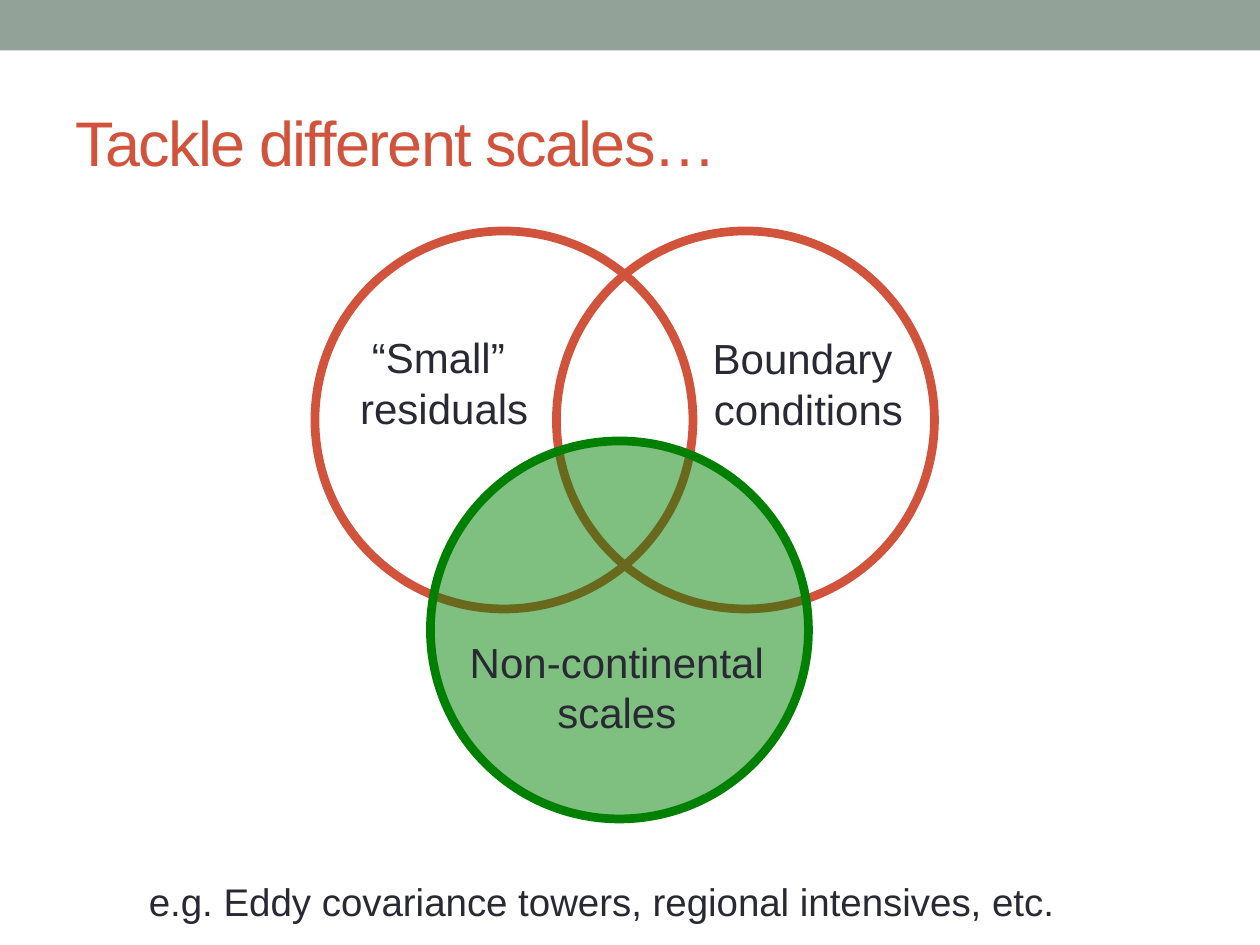
import pptx
import pptx.dml.color
import pptx.enum.shapes
import pptx.enum.text
import pptx.oxml.ns
import pptx.util
from dataclasses import dataclass
from lxml import etree

ALIGN = pptx.enum.text.PP_ALIGN
ANCHOR = pptx.enum.text.MSO_ANCHOR
SHAPE = pptx.enum.shapes.MSO_SHAPE


@dataclass(frozen=True)
class Theme:
    font: str = "Arial"
    band: str = "93A299"
    accent: str = "D2533C"
    highlight: str = "008000"
    ink: str = "292934"
    title_size: int = 36
    label_size: int = 24
    note_size: int = 22
    ring_width: int = 5


def rgb(value):
    return pptx.dml.color.RGBColor.from_string(value)


def write_text(frame, text, *, font, size, color, align=ALIGN.LEFT,
               anchor=ANCHOR.TOP, wrap=False, spacing=None):
    """Fill a text frame, one paragraph for each line of text."""
    frame.word_wrap = wrap
    frame.vertical_anchor = anchor
    for index, line in enumerate(text.split("\n")):
        paragraph = frame.paragraphs[0] if index == 0 else frame.add_paragraph()
        paragraph.alignment = align
        run = paragraph.add_run()
        run.text = line
        run.font.name = font
        run.font.size = pptx.util.Pt(size)
        run.font.color.rgb = rgb(color)
        if spacing is not None:
            run.font._element.set("spc", str(round(spacing * 100)))


class SlideBuilder:
    """Places elements on a grid of 120 columns by 90 rows."""

    COLUMNS, ROWS = 120, 90

    def __init__(self, presentation, theme):
        self.theme = theme
        self.column = presentation.slide_width / self.COLUMNS
        self.row = presentation.slide_height / self.ROWS
        self.slide = presentation.slides.add_slide(presentation.slide_layouts[5])

    def box(self, left, top, width, height):
        return (round(left * self.column), round(top * self.row),
                round(width * self.column), round(height * self.row))

    def title(self, text, *area):
        title = self.slide.shapes.title
        title.left, title.top, title.width, title.height = self.box(*area)
        write_text(title.text_frame, text, font=self.theme.font,
                   size=self.theme.title_size, color=self.theme.accent,
                   anchor=ANCHOR.MIDDLE, wrap=True, spacing=-1)

    def band(self, height):
        shape = self.slide.shapes.add_shape(
            SHAPE.RECTANGLE, *self.box(0, 0, self.COLUMNS, height))
        shape.shadow.inherit = False
        shape.fill.solid()
        shape.fill.fore_color.rgb = rgb(self.theme.band)
        shape.line.fill.background()

    def circle(self, left, top, diameter, color, opacity=0):
        shape = self.slide.shapes.add_shape(
            SHAPE.OVAL, *self.box(left, top, diameter, diameter))
        shape.shadow.inherit = False
        shape.line.color.rgb = rgb(color)
        shape.line.width = pptx.util.Pt(self.theme.ring_width)
        if not opacity:
            shape.fill.background()
            return
        shape.fill.solid()
        shape.fill.fore_color.rgb = rgb(color)
        fill_color = shape._element.spPr.find(
            "a:solidFill/a:srgbClr", pptx.oxml.ns._nsmap)
        etree.SubElement(fill_color, pptx.oxml.ns.qn("a:alpha"),
                         val=str(opacity * 1000))

    def text(self, text, *area, size, align=ALIGN.LEFT):
        text_box = self.slide.shapes.add_textbox(*self.box(*area))
        write_text(text_box.text_frame, text, font=self.theme.font, size=size,
                   color=self.theme.ink, align=align)
        text_box.text_frame.auto_size = pptx.enum.text.MSO_AUTO_SIZE.SHAPE_TO_FIT_TEXT


def main():
    presentation = pptx.Presentation()
    presentation.slide_width = pptx.util.Inches(10)
    presentation.slide_height = pptx.util.Inches(7.5)
    theme = Theme()
    builder = SlideBuilder(presentation, theme)

    # Header
    builder.band(4.8)
    builder.title("Tackle different scales…", 6, 7, 108, 13)

    # Overlapping circles
    diameter = 36
    builder.circle(30, 22, diameter, theme.accent)
    builder.circle(53, 22, diameter, theme.accent)
    builder.circle(41, 42, diameter, theme.highlight, opacity=50)

    # Circle labels: text, left, top, width
    labels = [
        ("“Small” \nresiduals", 33, 31, 18.6),
        ("Non-continental\nscales", 43.4, 60, 30.7),
        ("Boundary \nconditions", 66.7, 31.1, 20.6),
    ]
    for text, left, top, width in labels:
        builder.text(text, left, top, width, 10.9,
                     size=theme.label_size, align=ALIGN.CENTER)

    # Examples
    builder.text("e.g. Eddy covariance towers, regional intensives, etc.",
                 13, 83, 89.6, 5.6, size=theme.note_size)

    presentation.save("out.pptx")


if __name__ == "__main__":
    main()
